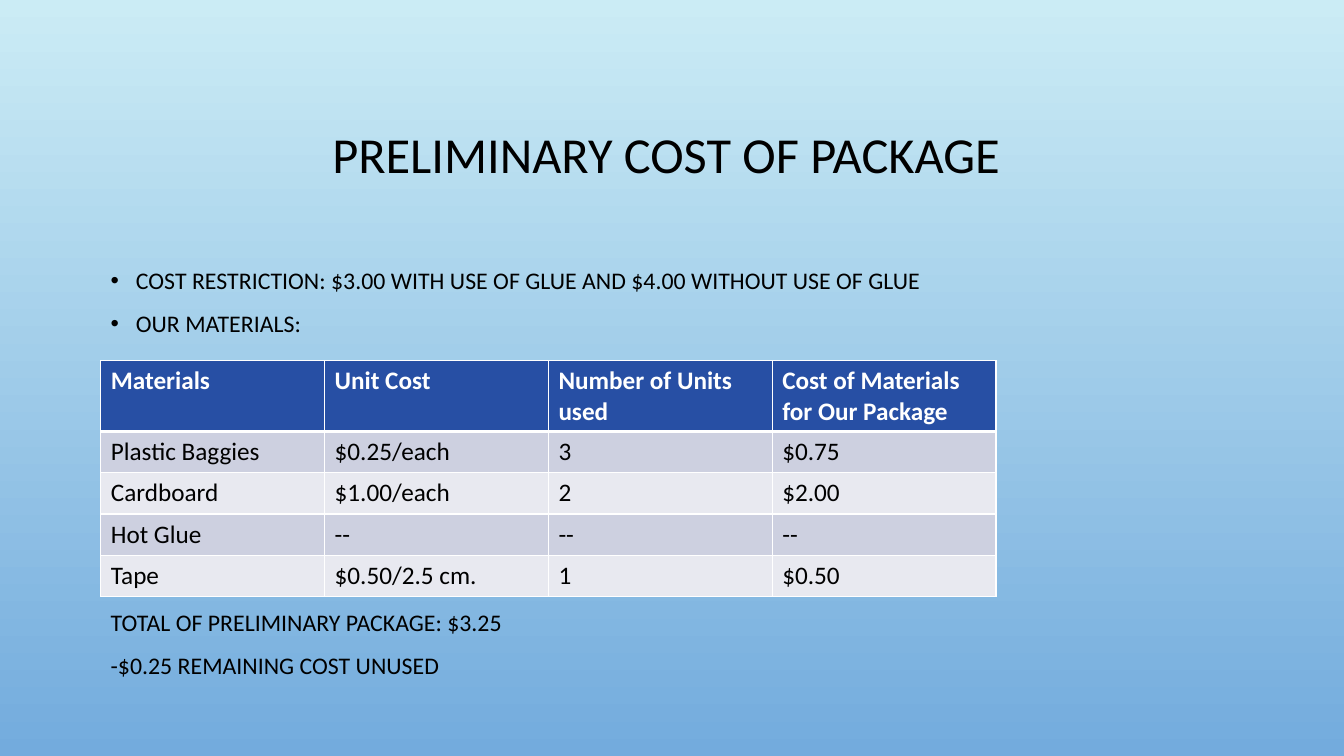
"""Build the slide on the preliminary cost of the package."""
from lxml.etree import SubElement
from pptx import Presentation
from pptx.dml.color import RGBColor
from pptx.enum.text import MSO_ANCHOR, PP_ALIGN
from pptx.oxml.ns import qn
from pptx.util import Inches, Pt

TITLE = "PRELIMINARY COST OF PACKAGE "
INTRO = [
    "COST RESTRICTION: $3.00 WITH USE OF GLUE AND $4.00 WITHOUT USE OF GLUE",
    "OUR MATERIALS:",
]
SUMMARY = ["TOTAL OF PRELIMINARY PACKAGE: $3.25", "-$0.25 REMAINING COST UNUSED"]
COSTS = [
    ("Materials", "Unit Cost", "Number of Units used", "Cost of Materials for Our Package"),
    ("Plastic Baggies", "$0.25/each", "3", "$0.75"),
    ("Cardboard", "$1.00/each", "2", "$2.00"),
    ("Hot Glue", "--", "--", "--"),
    ("Tape", "$0.50/2.5 cm.", "1", "$0.50"),
]
BACKGROUND = ("CBECF5", "73ABDD")
BLACK, WHITE = "000000", "FFFFFF"
HEADER_FILL, ROW_FILLS = "274FA4", ("CDD0E0", "E8E9F0")
COLUMN_WIDTH, HEADER_HEIGHT, ROW_HEIGHT = 2.22, 0.66, 0.41


def color(value):
    return RGBColor.from_string(value)


def style(para, size, tone=BLACK, bold=False):
    for span in para.runs:
        span.font.name = "Calibri"
        span.font.size = Pt(size)
        span.font.bold = bold
        span.font.color.rgb = color(tone)


def add_text(page, lines, size, left, top, width, height):
    box = page.shapes.add_textbox(Inches(left), Inches(top), Inches(width), Inches(height))
    frame = box.text_frame
    frame.word_wrap = True
    frame.text = "\n".join(lines)
    for index, para in enumerate(frame.paragraphs):
        if index:
            para.space_before = Pt(10)
        style(para, size)
    return frame


def add_bullet(para):
    properties = para._p.get_or_add_pPr()
    properties.set("marL", str(Inches(0.25)))
    properties.set("indent", str(-Inches(0.25)))
    SubElement(properties, qn("a:buFont"), typeface="Arial")
    SubElement(properties, qn("a:buChar"), char="•")


def add_border(cell, side, width):
    line = SubElement(cell._tc.get_or_add_tcPr(), qn(f"a:{side}"), w=str(Pt(width)))
    fill = SubElement(line, qn("a:solidFill"))
    SubElement(fill, qn("a:srgbClr"), val=WHITE)


def add_costs(page):
    rows, columns = len(COSTS), len(COSTS[0])
    height = HEADER_HEIGHT + (rows - 1) * ROW_HEIGHT
    table = page.shapes.add_table(
        rows, columns, Inches(1), Inches(3.58), Inches(columns * COLUMN_WIDTH), Inches(height)
    ).table
    for column in table.columns:
        column.width = Inches(COLUMN_WIDTH)
    for row, texts in enumerate(COSTS):
        header = row == 0
        table.rows[row].height = Inches(HEADER_HEIGHT if header else ROW_HEIGHT)
        for column, text in enumerate(texts):
            cell = table.cell(row, column)
            cell.text_frame.text = text
            style(cell.text_frame.paragraphs[0], 18, WHITE if header else BLACK, header)
            for side in ("lnL", "lnR", "lnT", "lnB"):
                thick = (row, side) in ((0, "lnB"), (1, "lnT"))
                add_border(cell, side, 3 if thick else 1)
            cell.fill.solid()
            cell.fill.fore_color.rgb = color(HEADER_FILL if header else ROW_FILLS[(row - 1) % 2])


def main():
    deck = Presentation()
    deck.slide_width, deck.slide_height = Inches(13.33), Inches(7.5)
    page = deck.slides.add_slide(deck.slide_layouts[6])

    backdrop = page.background.fill
    backdrop.gradient()
    backdrop.gradient_angle = 270
    for stop, tone in zip(backdrop.gradient_stops, BACKGROUND):
        stop.color.rgb = color(tone)

    title = add_text(page, [TITLE], 36, 1, 0.68, 11.33, 1.75)
    title.vertical_anchor = MSO_ANCHOR.MIDDLE
    title.paragraphs[0].alignment = PP_ALIGN.CENTER
    title.paragraphs[0].line_spacing = 0.9

    intro = add_text(page, INTRO, 17, 1, 2.59, 11.63, 0.85)
    for para in intro.paragraphs:
        add_bullet(para)
    add_costs(page)
    add_text(page, SUMMARY, 17, 1, 5.98, 11.63, 0.85)
    deck.save("out.pptx")


if __name__ == "__main__":
    main()
